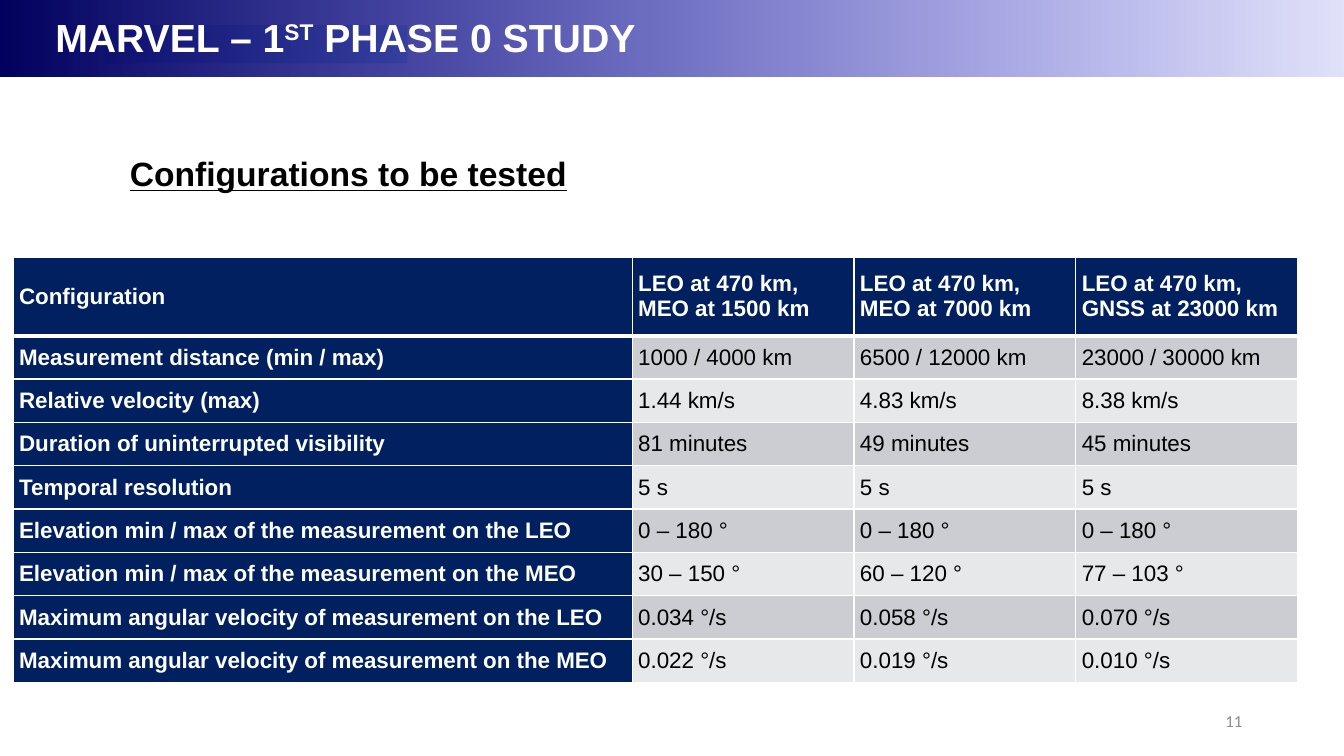
"""Build the slide listing the satellite link configurations to be tested."""
from dataclasses import dataclass

from lxml import etree
from pptx import Presentation
from pptx.dml.color import RGBColor
from pptx.enum.shapes import MSO_SHAPE
from pptx.enum.text import MSO_ANCHOR, PP_ALIGN
from pptx.oxml.ns import qn
from pptx.util import Inches, Pt

RECTANGLE = MSO_SHAPE.RECTANGLE
MIDDLE = MSO_ANCHOR.MIDDLE
LEFT, RIGHT = PP_ALIGN.LEFT, PP_ALIGN.RIGHT

WHITE = RGBColor(0xFF, 0xFF, 0xFF)
BLACK = RGBColor(0, 0, 0)
GREY = RGBColor(0x8C, 0x8C, 0x8C)
NAVY = RGBColor(0, 0x20, 0x5F)
PALE_BLUE = RGBColor(0xC8, 0xE9, 0xF5)
BANNER_START = RGBColor(0, 0, 0x5E)
BANNER_END = RGBColor(0, 0, 0xCC)
BANDS = (RGBColor(0xE7, 0xE8, 0xEA), RGBColor(0xCC, 0xCD, 0xD2))

COLUMN_WIDTHS = (6.14, 2.2, 2.2, 2.2)
HEADER_HEIGHT, ROW_HEIGHT = 0.78, 0.43
THIN, THICK = 1, 3

CONFIGURATIONS = (
    ("Configuration", "LEO at 470 km,\nMEO at 1500 km",
     "LEO at 470 km,\nMEO at 7000 km", "LEO at 470 km,\nGNSS at 23000 km"),
    ("Measurement distance (min / max)",
     "1000 / 4000 km", "6500 / 12000 km", "23000 / 30000 km"),
    ("Relative velocity (max)", "1.44 km/s", "4.83 km/s", "8.38 km/s"),
    ("Duration of uninterrupted visibility",
     "81 minutes", "49 minutes", "45 minutes"),
    ("Temporal resolution", "5 s", "5 s", "5 s"),
    ("Elevation min / max of the measurement on the LEO",
     "0 – 180 °", "0 – 180 °", "0 – 180 °"),
    ("Elevation min / max of the measurement on the MEO",
     "30 – 150 °", "60 – 120 °", "77 – 103 °"),
    ("Maximum angular velocity of measurement on the LEO",
     "0.034 °/s", "0.058 °/s", "0.070 °/s"),
    ("Maximum angular velocity of measurement on the MEO",
     "0.022 °/s", "0.019 °/s", "0.010 °/s"),
)


@dataclass(frozen=True)
class Label:
    runs: tuple[str, ...]
    box: tuple[float, float, float, float]
    size: int
    color: RGBColor
    face: str = "Arial"
    bold: bool = True
    underline: bool = False
    align: PP_ALIGN = LEFT
    wrap: bool = False
    line_spacing: float = 1.0


TITLE = Label(("MARVEL – 1", "ST", " PHASE 0 STUDY"), (0.45, 0.13, 6.06, 0.53),
              28, WHITE, line_spacing=0.9)
SUBTITLE = Label(("Configurations to be tested",), (1.19, 1.47, 4.57, 0.5),
                 24, BLACK, underline=True)
PAGE_NUMBER = Label(("11",), (9.42, 6.95, 3, 0.4), 12, GREY, "Calibri",
                    bold=False, align=RIGHT, wrap=True)


def style(font, face: str, size: int, color: RGBColor, bold: bool) -> None:
    font.name, font.size, font.bold = face, Pt(size), bold
    font.color.rgb = color


def add_label(slide, label: Label):
    frame = slide.shapes.add_textbox(*map(Inches, label.box)).text_frame
    frame.word_wrap = label.wrap
    frame.vertical_anchor = MIDDLE
    paragraph = frame.paragraphs[0]
    paragraph.alignment = label.align
    paragraph.line_spacing = label.line_spacing
    style(paragraph.font, label.face, label.size, label.color, label.bold)
    paragraph.font.underline = label.underline
    for text in label.runs:
        paragraph.add_run().text = text
    return paragraph


def add_bar(slide, left: float, top: float, width: float, height: float):
    bar = slide.shapes.add_shape(
        RECTANGLE, *map(Inches, (left, top, width, height)))
    bar.shadow.inherit = False
    bar.line.fill.background()
    return bar


def add_banner(slide) -> None:
    patch = add_bar(slide, 1.04, 0.25, 3, 0.38)
    patch.fill.solid()
    patch.fill.fore_color.rgb = PALE_BLUE

    banner = add_bar(slide, 0, 0, 13.33, 0.76)
    banner.fill.gradient()
    banner.fill.gradient_angle = 0
    for stop, color, position in zip(
            banner.fill.gradient_stops, (BANNER_START, BANNER_END), (0, 1)):
        stop.color.rgb, stop.position = color, position
    end_color = list(banner._element.spPr.iter(qn("a:srgbClr")))[-1]
    etree.SubElement(end_color, qn("a:alpha"), val="12000")


def add_borders(cell, row: int) -> None:
    top = THICK if row == 1 else THIN
    bottom = THICK if row == 0 else THIN
    properties = cell._tc.get_or_add_tcPr()
    for side, width in (("L", THIN), ("R", THIN), ("T", top), ("B", bottom)):
        line = etree.SubElement(properties, qn(f"a:ln{side}"), w=str(Pt(width)))
        fill = etree.SubElement(line, qn("a:solidFill"))
        etree.SubElement(fill, qn("a:srgbClr"), val=str(WHITE))


def fill_cell(cell, text: str, row: int, column: int) -> None:
    heading = row == 0 or column == 0
    cell.text = text
    cell.vertical_anchor = MIDDLE
    cell.margin_left = cell.margin_right = Inches(0.06)
    cell.margin_top = cell.margin_bottom = 0
    add_borders(cell, row)
    cell.fill.solid()
    cell.fill.fore_color.rgb = NAVY if heading else BANDS[row % 2]
    for paragraph in cell.text_frame.paragraphs:
        style(paragraph.font, "Arial", 16, WHITE if heading else BLACK, heading)


def add_configurations(slide) -> None:
    heights = [HEADER_HEIGHT] + [ROW_HEIGHT] * (len(CONFIGURATIONS) - 1)
    table = slide.shapes.add_table(
        len(heights), len(COLUMN_WIDTHS), Inches(0.13), Inches(2.55),
        Inches(sum(COLUMN_WIDTHS)), Inches(sum(heights))).table
    table.first_row = table.horz_banding = False
    for column, width in zip(table.columns, COLUMN_WIDTHS):
        column.width = Inches(width)
    for row, height in zip(table.rows, heights):
        row.height = Inches(height)
    for row, texts in enumerate(CONFIGURATIONS):
        for column, text in enumerate(texts):
            fill_cell(table.cell(row, column), text, row, column)


def main() -> None:
    deck = Presentation()
    deck.slide_width, deck.slide_height = Inches(13.33), Inches(7.5)
    slide = deck.slides.add_slide(deck.slide_layouts[6])
    add_banner(slide)
    add_label(slide, PAGE_NUMBER)
    title = add_label(slide, TITLE)
    title.runs[1].font._element.set("baseline", "30000")
    add_configurations(slide)
    add_label(slide, SUBTITLE)
    deck.save("out.pptx")


if __name__ == "__main__":
    main()
